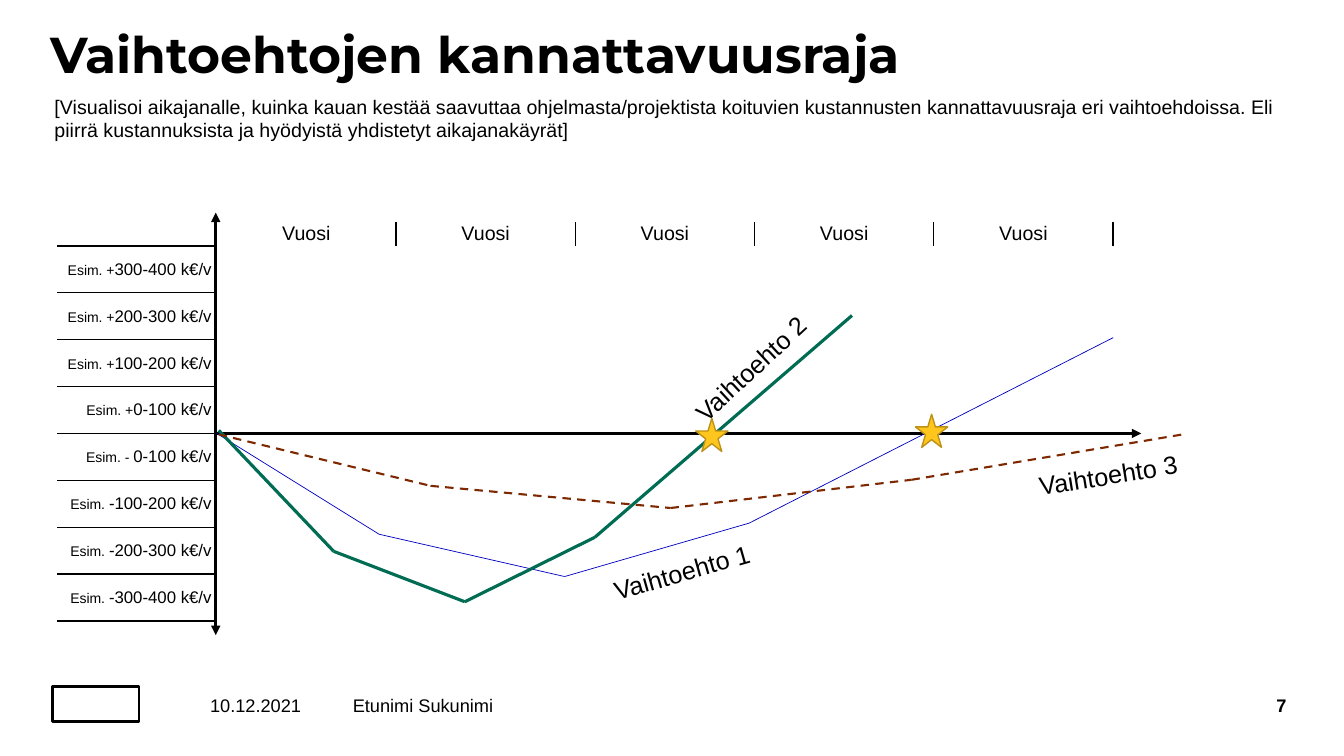
from itertools import pairwise

from lxml.etree import SubElement
from pptx import Presentation
from pptx.dml.color import RGBColor
from pptx.enum.dml import MSO_LINE
from pptx.enum.shapes import MSO_CONNECTOR, MSO_SHAPE
from pptx.enum.text import MSO_ANCHOR, MSO_AUTO_SIZE, PP_ALIGN
from pptx.oxml.ns import qn
from pptx.util import Pt

COLORS = {
    "black": "000000",
    "white": "FFFFFF",
    "blue": "0000BF",
    "green": "006C53",
    "brown": "7E2800",
    "star": "FFC61E",
    "star edge": "BD9216",
}
TITLE = "Vaihtoehtojen kannattavuusraja"
GUIDANCE = (
    "[Visualisoi aikajanalle, kuinka kauan kestää saavuttaa ohjelmasta/projektista "
    "koituvien kustannusten kannattavuusraja eri vaihtoehdoissa. Eli piirrä "
    "kustannuksista ja hyödyistä yhdistetyt aikajanakäyrät]"
)
YEARS = ["Vuosi"] * 5
AMOUNTS = [
    ("Esim. +", "300-400 k€/v"),
    ("Esim. +", "200-300 k€/v"),
    ("Esim. +", "100-200 k€/v"),
    ("Esim. +", "0-100 k€/v"),
    ("Esim. - ", "0-100 k€/v"),
    ("Esim. ", "-100-200 k€/v"),
    ("Esim. ", "-200-300 k€/v"),
    ("Esim. ", "-300-400 k€/v"),
]
# Each option: curve points, colour, line width, dash
OPTIONS = [
    ([(215, 430), (376, 530), (560, 572), (743, 519), (1104, 335)], "blue", 0.5, None),
    ([(217, 427), (331, 547), (461, 597), (590, 533), (845, 313)], "green", 2.25, None),
    ([(217, 431), (427, 482), (665, 504), (904, 476), (1173, 431)], "brown", 1.5, MSO_LINE.DASH),
]
# Each label: text, left, top, rotation
LABELS = [
    ("Vaihtoehto 1", 597, 547, 344.1),
    ("Vaihtoehto 2", 665, 345, 317.2),
    ("Vaihtoehto 3", 1020, 451, 350.8),
]
BREAK_EVEN_STARS = [(908, 411), (690, 415)]
# Each footer part: text, box, alignment, bold
FOOTER = [
    ("10.12.2021", (182, 686, 143, 28), PP_ALIGN.CENTER, False),
    ("Etunimi Sukunimi", (350, 686, 450, 28), PP_ALIGN.LEFT, False),
    ("7", (1141, 686, 135, 28), PP_ALIGN.RIGHT, True),
]


def px(*lengths):
    """Turn lengths at 100 px to the inch into EMU."""
    return [round(length * 9144) for length in lengths]


def color(name):
    return RGBColor.from_string(COLORS[name])


def set_insets(target, insets):
    (target.margin_left, target.margin_top,
     target.margin_right, target.margin_bottom) = px(*insets)


def write(frame, text, size=14, font="Arial", bold=False, align=PP_ALIGN.LEFT, spacing=None):
    """Fill one paragraph with a string, or with (text, size) runs."""
    paragraph = frame.paragraphs[0]
    paragraph.alignment = align
    paragraph.line_spacing = spacing
    for run_text, run_size in [(text, size)] if isinstance(text, str) else text:
        run = paragraph.add_run()
        run.text = run_text
        run.font.size = Pt(run_size)
        run.font.name = font
        run.font.bold = bold
        run.font.color.rgb = color("black")


def add_text(box, text, insets=(0, 0, 0, 0), anchor=MSO_ANCHOR.TOP, wrap=True, **text_format):
    shape = slide.shapes.add_textbox(*px(*box))
    frame = shape.text_frame
    set_insets(frame, insets)
    frame.word_wrap = wrap
    frame.vertical_anchor = anchor
    write(frame, text, **text_format)
    return shape


def add_line(start, end, line_color, width, dash=None, arrows=()):
    connector = slide.shapes.add_connector(MSO_CONNECTOR.STRAIGHT, *px(*start, *end))
    connector.line.color.rgb = color(line_color)
    connector.line.width = Pt(width)
    if dash:
        connector.line.dash_style = dash
    properties = connector.element.spPr
    for arrow in arrows:
        SubElement(properties.find(qn("a:ln")), qn(f"a:{arrow}"), type="triangle")
    SubElement(properties, qn("a:effectLst"))


def add_shape(kind, box, fill, line, width):
    shape = slide.shapes.add_shape(kind, *px(*box))
    shape.shadow.inherit = False
    shape.fill.solid()
    shape.fill.fore_color.rgb = color(fill)
    shape.line.color.rgb = color(line)
    shape.line.width = Pt(width)


def add_scale_table(box, rows, ruled_sides, insets, align):
    """Add an unfilled table of equal cells, ruled only on the given sides."""
    left, top, width, height = box
    table = slide.shapes.add_table(len(rows), len(rows[0]), *px(*box)).table
    table.first_row = table.horz_banding = False
    for column in table.columns:
        column.width = px(width / len(rows[0]))[0]
    for table_row, texts in zip(table.rows, rows):
        table_row.height = px(height / len(rows))[0]
        for cell, text in zip(table_row.cells, texts):
            set_insets(cell, insets)
            cell.vertical_anchor = MSO_ANCHOR.MIDDLE
            write(cell.text_frame, text, align=align)
            properties = cell._tc.get_or_add_tcPr()
            for side in "LRTB":
                border = SubElement(properties, qn(f"a:ln{side}"), w=str(Pt(1)))
                if side in ruled_sides:
                    fill = SubElement(border, qn("a:solidFill"))
                    SubElement(fill, qn("a:srgbClr"), val=COLORS["black"])
                else:
                    SubElement(border, qn("a:noFill"))
            cell.fill.background()


presentation = Presentation()
presentation.slide_width, presentation.slide_height = px(1333, 750)
slide = presentation.slides.add_slide(presentation.slide_layouts[5])

title = slide.shapes.title
title.left, title.top, title.width, title.height = px(50, 30, 1229, 60)
title_frame = title.text_frame
set_insets(title_frame, (0, 0, 0, 0))
title_frame.vertical_anchor = MSO_ANCHOR.TOP
title_frame.auto_size = MSO_AUTO_SIZE.NONE
write(title_frame, TITLE, size=36, font="Montserrat", bold=True, spacing=0.9)

add_text((50, 90, 1219, 55), GUIDANCE, insets=(4, 4, 4, 4))
add_shape(MSO_SHAPE.RECTANGLE, (52, 681, 86, 35), "white", "black", 2)
for text, box, align, bold in FOOTER:
    add_text(box, text, anchor=MSO_ANCHOR.MIDDLE, size=13, align=align, bold=bold)

add_line((214, 430), (1132, 430), "black", 2.25, arrows=["tailEnd"])
add_line((214, 630), (214, 211), "black", 2.25, arrows=["headEnd", "tailEnd"])
add_scale_table((215, 220, 889, 24), [YEARS], "LR", (0, 0, 0, 0), PP_ALIGN.CENTER)
amount_rows = [[[(prefix, 10), (amount, 12)]] for prefix, amount in AMOUNTS]
add_scale_table((57, 244, 157, 372), amount_rows, "TB", (0, 0, 4, 0), PP_ALIGN.RIGHT)

for points, line_color, width, dash in OPTIONS:
    for start, end in pairwise(points):
        add_line(start, end, line_color, width, dash)
for left, top in BREAK_EVEN_STARS:
    add_shape(MSO_SHAPE.STAR_5_POINT, (left, top, 32, 33), "star", "star edge", 1)
for text, left, top, rotation in LABELS:
    label = add_text((left, top, 160, 40), text, insets=(10, 5, 10, 5), wrap=False, size=18)
    label.text_frame.auto_size = MSO_AUTO_SIZE.SHAPE_TO_FIT_TEXT
    label.rotation = rotation

presentation.save("out.pptx")
